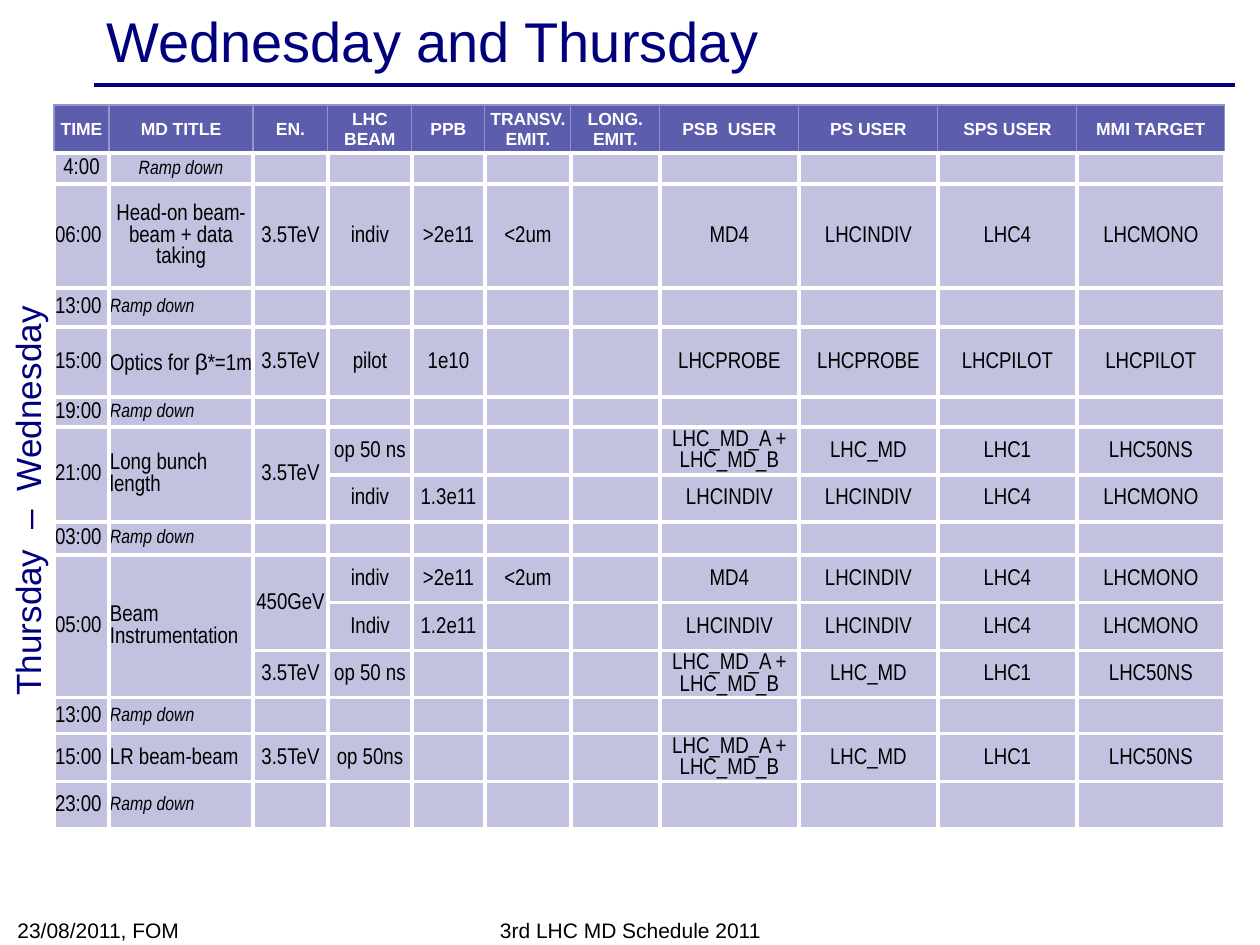
"""Build the Wednesday and Thursday machine development schedule slide."""
from dataclasses import dataclass
from itertools import groupby

from lxml import etree
from pptx import Presentation
from pptx.dml.color import RGBColor
from pptx.enum.shapes import MSO_CONNECTOR
from pptx.enum.text import MSO_ANCHOR, PP_ALIGN
from pptx.oxml.ns import qn
from pptx.slide import Slide
from pptx.table import Table, _Cell
from pptx.text.text import _Paragraph
from pptx.util import Emu, Pt

STRAIGHT = MSO_CONNECTOR.STRAIGHT
TOP, MIDDLE, BOTTOM = MSO_ANCHOR.TOP, MSO_ANCHOR.MIDDLE, MSO_ANCHOR.BOTTOM
LEFT, CENTER, RIGHT = PP_ALIGN.LEFT, PP_ALIGN.CENTER, PP_ALIGN.RIGHT

NAVY = RGBColor(0x00, 0x00, 0x7D)
BLACK = RGBColor(0x00, 0x00, 0x00)
WHITE = RGBColor(0xFF, 0xFF, 0xFF)
HEADER_FILL = RGBColor(0x5D, 0x5D, 0xAE)
HEADER_EDGE = RGBColor(0x94, 0x94, 0xC9)
BODY_FILL = RGBColor(0xC2, 0xC2, 0xE0)

EMU_PER_PX = 914400 / 126
COLUMN_WIDTHS = (55, 144, 75, 84, 73, 86, 89, 139, 139, 139, 148)
HEADER_HEIGHT = 48
HEADINGS = ("TIME", "MD TITLE", "EN.", "LHC BEAM", "PPB", "TRANSV. EMIT.", "LONG. EMIT.",
            "PSB  USER", "PS USER", "SPS USER", "MMI TARGET")
RAMP_DOWN = "Ramp down"
MD4_USERS = ("MD4", "LHCINDIV", "LHC4", "LHCMONO")
INDIV_USERS = ("LHCINDIV", "LHCINDIV", "LHC4", "LHCMONO")
PILOT_USERS = ("LHCPROBE", "LHCPROBE", "LHCPILOT", "LHCPILOT")
NOMINAL_USERS = ("LHC_MD_A + LHC_MD_B", "LHC_MD", "LHC1", "LHC50NS")


@dataclass(frozen=True)
class Style:
    """Character formatting of a run."""
    size: int
    font: str = "Arial"
    color: RGBColor = BLACK
    bold: bool = False
    italic: bool = False


@dataclass(frozen=True)
class Label:
    """A text box outside the table."""
    text: str
    box: tuple[int, int, int, int]
    style: Style
    anchor: MSO_ANCHOR
    align: PP_ALIGN = LEFT
    rotation: int = 0


@dataclass(frozen=True)
class ScheduleRow:
    """A table row; columns from centred_from onwards are centred."""
    height: int
    time: str = ""
    title: str = RAMP_DOWN
    energy: str = ""
    beam: str = ""
    intensity: str = ""
    emittance: str = ""
    users: tuple[str, ...] = ("", "", "", "")
    centred_from: int = 2

    def texts(self) -> tuple[str, ...]:
        """Return the row's cell texts from left to right."""
        return (self.time, self.title, self.energy, self.beam, self.intensity,
                self.emittance, "", *self.users)


HEADER_STYLE = Style(10, color=WHITE, bold=True)
BODY_STYLE = Style(13, "Arial Narrow")
RAMP_STYLE = Style(11, "Arial Narrow", italic=True)
FOOTER_STYLE = Style(12)

LABELS = (
    Label("3rd LHC MD Schedule 2011", (431, 914, 399, 35), FOOTER_STYLE, BOTTOM, CENTER),
    Label("23/08/2011, FOM", (5, 912, 294, 37), FOOTER_STYLE, BOTTOM),
    Label("Wednesday and Thursday", (94, 4, 1134, 72), Style(32, color=NAVY), MIDDLE),
    Label("Thursday  –  Wednesday", (-181, 475, 417, 55), Style(20, color=NAVY), TOP, RIGHT, 270),
)
SCHEDULE = (
    ScheduleRow(31, "4:00", centred_from=0),
    ScheduleRow(104, "06:00", "Head-on beam-beam + data taking", "3.5TeV", "indiv", ">2e11",
                "<2um", MD4_USERS, centred_from=1),
    ScheduleRow(39, "13:00"),
    ScheduleRow(70, "15:00", "Optics for β*=1m", "3.5TeV", "pilot", "1e10", users=PILOT_USERS),
    ScheduleRow(30, "19:00"),
    ScheduleRow(48, "21:00", "Long bunch length", "3.5TeV", "op 50 ns", users=NOMINAL_USERS),
    ScheduleRow(47, title="", beam="indiv", intensity="1.3e11", users=INDIV_USERS),
    ScheduleRow(33, "03:00"),
    ScheduleRow(48, "05:00", "Beam Instrumentation", "450GeV", "indiv", ">2e11", "<2um", MD4_USERS),
    ScheduleRow(48, title="", beam="Indiv", intensity="1.2e11", users=INDIV_USERS),
    ScheduleRow(47, title="", energy="3.5TeV", beam="op 50 ns", users=NOMINAL_USERS),
    ScheduleRow(36, "13:00"),
    ScheduleRow(48, "15:00", "LR beam-beam", "3.5TeV", "op 50ns", users=NOMINAL_USERS),
    ScheduleRow(47, "23:00"),
)
MERGES = ((6, 7, 0), (6, 7, 1), (6, 7, 2), (9, 11, 0), (9, 11, 1), (9, 10, 2))


def px(length: int) -> Emu:
    """Turn pixels into EMU."""
    return Emu(round(length * EMU_PER_PX))


def add_runs(paragraph: _Paragraph, text: str, style: Style) -> None:
    """Add text run by run, with Greek letters in Arial."""
    for greek, letters in groupby(text, key=lambda letter: letter == "β"):
        run = paragraph.add_run()
        run.text = "".join(letters)
        run.font.name = "Arial" if greek else style.font
        run.font.size = Pt(style.size)
        run.font.bold = style.bold
        run.font.italic = style.italic
        run.font.color.rgb = style.color


def add_label(slide: Slide, label: Label) -> None:
    """Draw a text box."""
    shape = slide.shapes.add_textbox(*map(px, label.box))
    shape.rotation = label.rotation
    frame = shape.text_frame
    frame.word_wrap = True
    frame.vertical_anchor = label.anchor
    paragraph = frame.paragraphs[0]
    paragraph.alignment = label.align
    add_runs(paragraph, label.text, label.style)


def add_title_rule(slide: Slide) -> None:
    """Draw the line below the title."""
    rule = slide.shapes.add_connector(STRAIGHT, px(94), px(85), px(1235), px(85))
    rule.line.color.rgb = NAVY
    rule.line.width = Pt(2)
    etree.SubElement(rule._element.spPr, qn("a:effectLst"))


def set_border(cell: _Cell, side: str, color: RGBColor, width: float) -> None:
    """Set one border of a cell."""
    properties = cell._tc.get_or_add_tcPr()
    line = etree.SubElement(properties, qn(f"a:ln{side}"), w=str(Pt(width)))
    fill = etree.SubElement(line, qn("a:solidFill"))
    etree.SubElement(fill, qn("a:srgbClr"), val=str(color))


def fill_cell(cell: _Cell, text: str, style: Style, align: PP_ALIGN, header: bool) -> None:
    """Write and format one table cell."""
    for side in "LRTB":
        thin = header and side != "B"
        set_border(cell, side, HEADER_EDGE if thin else WHITE, 0.75 if thin else 2.25)
    cell.fill.solid()
    cell.fill.fore_color.rgb = HEADER_FILL if header else BODY_FILL
    cell.margin_left = cell.margin_right = cell.margin_top = px(1)
    cell.margin_bottom = 0
    cell.vertical_anchor = MIDDLE
    paragraph = cell.text_frame.paragraphs[0]
    paragraph.alignment = align
    add_runs(paragraph, text, style)
    etree.SubElement(paragraph._p, qn("a:endParaRPr"), sz=str(style.size * 100))


def fill_table(table: Table) -> None:
    """Size, fill and merge the schedule table."""
    table.first_row = table.horz_banding = False
    for column, width in zip(table.columns, COLUMN_WIDTHS):
        column.width = px(width)
    table.rows[0].height = px(HEADER_HEIGHT)
    for index, heading in enumerate(HEADINGS):
        fill_cell(table.cell(0, index), heading, HEADER_STYLE, CENTER, True)
    for row_index, row in enumerate(SCHEDULE, start=1):
        table.rows[row_index].height = px(row.height)
        for index, text in enumerate(row.texts()):
            style = RAMP_STYLE if text == RAMP_DOWN else BODY_STYLE
            align = CENTER if index >= row.centred_from else LEFT
            fill_cell(table.cell(row_index, index), text, style, align, False)
    for first, last, column_index in MERGES:
        table.cell(first, column_index).merge(table.cell(last, column_index))


def main() -> None:
    """Build and save the presentation."""
    presentation = Presentation()
    presentation.slide_width, presentation.slide_height = px(1260), px(945)
    slide = presentation.slides.add_slide(presentation.slide_layouts[6])
    add_title_rule(slide)
    height = HEADER_HEIGHT + sum(row.height for row in SCHEDULE)
    frame = slide.shapes.add_table(len(SCHEDULE) + 1, len(HEADINGS), px(54), px(105),
                                   px(sum(COLUMN_WIDTHS)), px(height))
    fill_table(frame.table)
    for label in LABELS:
        add_label(slide, label)
    presentation.save("out.pptx")


if __name__ == "__main__":
    main()
